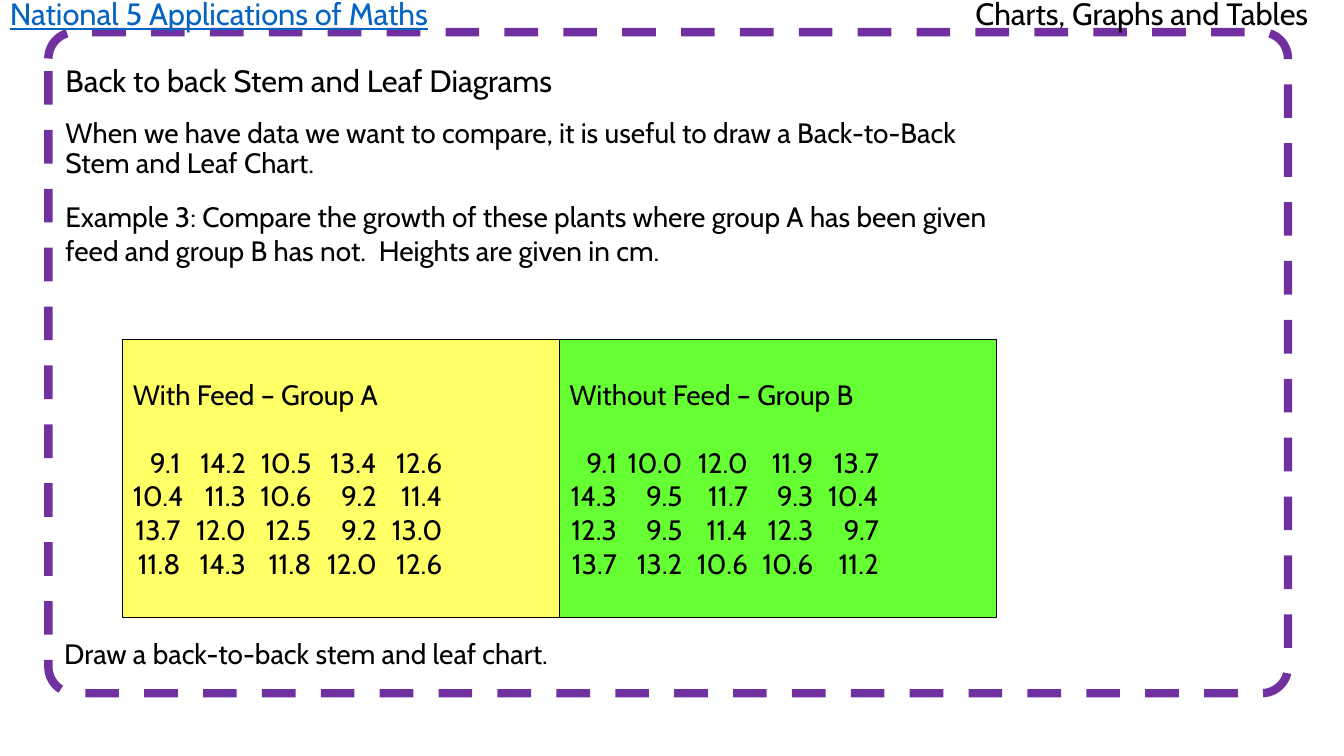
from lxml.etree import SubElement
from pptx import Presentation
from pptx.dml.color import RGBColor
from pptx.enum.dml import MSO_LINE
from pptx.enum.shapes import MSO_SHAPE as Shape
from pptx.enum.text import MSO_ANCHOR as Anchor, MSO_AUTO_SIZE as AutoSize, PP_ALIGN as Align
from pptx.oxml.ns import qn
from pptx.util import Cm, Pt

BLACK = RGBColor(0x00, 0x00, 0x00)
PURPLE = RGBColor(0x70, 0x30, 0xA0)
LINK_BLUE = RGBColor(0x05, 0x63, 0xC1)
YELLOW = RGBColor(0xFF, 0xFF, 0x66)
GREEN = RGBColor(0x66, 0xFF, 0x33)
FONT = "Cabin"

FIRST_COLUMN, COLUMN_STEP, COLUMNS = 1.2, 1.65, 5

FEED_HEIGHTS = [
    ["9.1", "14.2", "10.5", "13.4", "12.6"],
    ["10.4", "11.3", "10.6", "9.2", "11.4"],
    ["13.7", "12.0", "12.5", "9.2", "13.0"],
    ["11.8", "14.3", "11.8", "12.0", "12.6"],
]
NO_FEED_HEIGHTS = [
    ["9.1", "10.0", "12.0", "11.9", "13.7"],
    ["14.3", "9.5", "11.7", "9.3", "10.4"],
    ["12.3", "9.5", "11.4", "12.3", "9.7"],
    ["13.7", "13.2", "10.6", "10.6", "11.2"],
]


def write(paragraph, text, size=20, color=BLACK, underline=None, spacing=None, before=None):
    paragraph.alignment = Align.LEFT
    paragraph.line_spacing = spacing
    paragraph.space_before = before
    run = paragraph.add_run()
    run.text = text
    run.font.name = FONT
    run.font.size = Pt(size)
    run.font.color.rgb = color
    run.font.underline = underline


def add_heading(slide, text, left, top, width, **style):
    frame = slide.shapes.add_textbox(Cm(left), Cm(top), Cm(width), Cm(1.19)).text_frame
    frame.word_wrap = False
    frame.auto_size = AutoSize.SHAPE_TO_FIT_TEXT
    write(frame.paragraphs[0], text, size=22, **style)


def add_body(slide, text, left, top, anchor=Anchor.MIDDLE, **style):
    frame = slide.shapes.add_textbox(Cm(left), Cm(top), Cm(24.13), Cm(2.82)).text_frame
    frame.word_wrap = True
    frame.vertical_anchor = anchor
    write(frame.paragraphs[0], text, **style)


def add_border(slide):
    border = slide.shapes.add_shape(
        Shape.ROUNDED_RECTANGLE, Cm(1.22), Cm(0.81), Cm(31.24), Cm(16.66))
    border.adjustments[0] = 0.04
    border.shadow.inherit = False
    border.fill.background()
    border.line.color.rgb = PURPLE
    border.line.width = Pt(6)
    border.line.dash_style = MSO_LINE.DASH


def align_columns(paragraph):
    tabs = SubElement(paragraph._p.get_or_add_pPr(), qn("a:tabLst"))
    for column in range(COLUMNS):
        position = Cm(FIRST_COLUMN + column * COLUMN_STEP)
        SubElement(tabs, qn("a:tab"), pos=str(position), algn="r")


def add_group(slide, title, heights, left, color):
    panel = slide.shapes.add_shape(Shape.RECTANGLE, Cm(left), Cm(8.56), Cm(11.02), Cm(7.01))
    panel.shadow.inherit = False
    panel.fill.solid()
    panel.fill.fore_color.rgb = color
    panel.line.color.rgb = BLACK
    panel.line.width = Pt(0.75)
    frame = panel.text_frame
    frame.word_wrap = True
    frame.vertical_anchor = Anchor.MIDDLE
    write(frame.paragraphs[0], title)
    for index, row in enumerate(heights):
        paragraph = frame.add_paragraph()
        write(paragraph, "".join(f"\t{height}" for height in row),
              before=Pt(0 if index else 24))
        align_columns(paragraph)


def main():
    presentation = Presentation()
    presentation.slide_width = Cm(33.87)
    presentation.slide_height = Cm(19.05)
    slide = presentation.slides.add_slide(presentation.slide_layouts[6])

    add_border(slide)
    add_heading(slide, "Charts, Graphs and Tables", 24.33, -0.25, 9.6)
    add_heading(slide, "Back to back Stem and Leaf Diagrams", 1.4, 1.42, 13.67)
    add_heading(slide, "National 5 Applications of Maths", 0, -0.25, 11.76,
                color=LINK_BLUE, underline=True)
    add_body(slide, "When we have data we want to compare, it is useful to draw a "
             "Back-to-Back Stem and Leaf Chart.", 1.4, 1.83, Anchor.BOTTOM, spacing=0.9)
    add_body(slide, "Example 3: Compare the growth of these plants where group A has been "
             "given feed and group B has not.  Heights are given in cm.", 1.4, 4.47)
    add_group(slide, "With Feed – Group A", FEED_HEIGHTS, 3.1, YELLOW)
    add_group(slide, "Without Feed – Group B", NO_FEED_HEIGHTS, 14.1, GREEN)
    add_body(slide, "Draw a back-to-back stem and leaf chart.", 1.37, 15.04)

    presentation.save("out.pptx")


if __name__ == "__main__":
    main()
